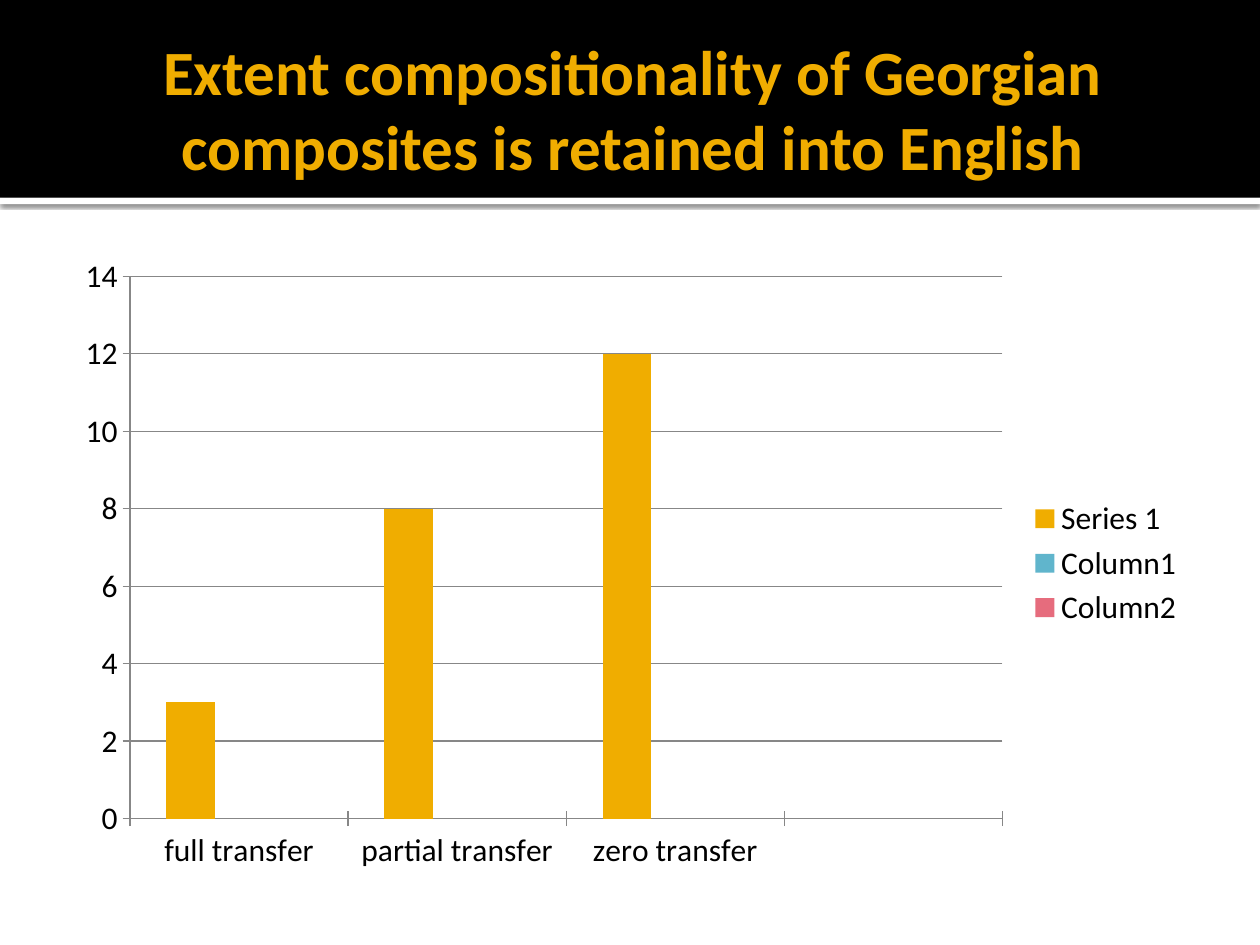
from dataclasses import dataclass
from typing import Optional

from lxml import etree
from pptx import Presentation
from pptx.chart.data import CategoryChartData
from pptx.dml.color import RGBColor
from pptx.enum import chart as charts, shapes, text
from pptx.oxml.ns import qn
from pptx.util import Inches, Pt


@dataclass(frozen=True)
class Theme:
    font: str = "Calibri"
    gold: str = "F0AD00"
    blue: str = "60B5CC"
    rose: str = "E66C7D"
    black: str = "000000"
    white: str = "FFFFFF"
    axis_grey: str = "878787"
    title_size: int = 36
    chart_size: int = 18


@dataclass(frozen=True)
class Box:
    left: float
    top: float
    width: float
    height: float

    def lengths(self) -> list:
        return [Inches(v) for v in (self.left, self.top, self.width, self.height)]


@dataclass(frozen=True)
class Band:
    box: Box
    color: str
    shadow: bool = False


@dataclass(frozen=True)
class Series:
    name: str
    values: tuple[Optional[int], ...]
    color: str


THEME = Theme()
BANDS = (
    Band(Box(0, 1.57, 10, 0.05), THEME.white, shadow=True),
    Band(Box(0, 0, 10, 1.57), THEME.black),
)
TITLE = "Extent compositionality of Georgian composites is retained into English"
TRANSFERS = ("full transfer", "partial transfer", "zero transfer", "")
NO_VALUES = (None,) * len(TRANSFERS)
SERIES = (
    Series("Series 1", (3, 8, 12, None), THEME.gold),
    Series("Column1", NO_VALUES, THEME.blue),
    Series("Column2", NO_VALUES, THEME.rose),
)


def rgb(color: str) -> RGBColor:
    return RGBColor.from_string(color)


def add_drop_shadow(shape) -> None:
    effects = shape._element.spPr.find(qn("a:effectLst"))
    shadow = etree.SubElement(effects, qn("a:outerShdw"), blurRad=str(Pt(2.5)),
                              dist=str(Pt(0.8)), dir="5400000", rotWithShape="0")
    color = etree.SubElement(shadow, qn("a:srgbClr"), val=THEME.black)
    etree.SubElement(color, qn("a:alpha"), val="60000")


def add_band(slide, band: Band) -> None:
    strip = slide.shapes.add_shape(shapes.MSO_SHAPE.RECTANGLE, *band.box.lengths())
    strip.fill.solid()
    strip.fill.fore_color.rgb = rgb(band.color)
    strip.line.fill.background()
    strip.shadow.inherit = False
    if band.shadow:
        add_drop_shadow(strip)


def add_text(slide, content: str, box: Box, *, size: int, color: str,
             bold: bool = False, align=text.PP_ALIGN.CENTER) -> None:
    frame = slide.shapes.add_textbox(*box.lengths()).text_frame
    frame.word_wrap = True
    frame.vertical_anchor = text.MSO_ANCHOR.MIDDLE
    frame.margin_left = Inches(0.1)
    frame.margin_right = frame.margin_top = frame.margin_bottom = Inches(0.05)
    paragraph = frame.paragraphs[0]
    paragraph.alignment = align
    run = paragraph.add_run()
    run.text = content
    run.font.name = THEME.font
    run.font.size = Pt(size)
    run.font.bold = bold
    run.font.color.rgb = rgb(color)


def add_column_chart(slide, box: Box, categories: tuple[str, ...],
                     series: tuple[Series, ...]) -> None:
    data = CategoryChartData()
    data.categories = categories
    for item in series:
        data.add_series(item.name, item.values)
    chart = slide.shapes.add_chart(charts.XL_CHART_TYPE.COLUMN_CLUSTERED,
                                   *box.lengths(), data).chart
    chart.has_title = False
    chart.font.name = THEME.font
    chart.font.size = Pt(THEME.chart_size)
    chart.font.color.rgb = rgb(THEME.black)

    # Legend
    chart.has_legend = True
    chart.legend.position = charts.XL_LEGEND_POSITION.RIGHT
    chart.legend.include_in_layout = False

    # Columns
    plot = chart.plots[0]
    plot.vary_by_categories = False
    plot.gap_width = 150
    for column, item in zip(plot.series, series):
        column.format.fill.solid()
        column.format.fill.fore_color.rgb = rgb(item.color)

    # Axes and gridlines
    values = chart.value_axis
    values.minimum_scale, values.maximum_scale, values.major_unit = 0, 14, 2
    values.has_major_gridlines = True
    for axis in (chart.category_axis, values):
        axis.major_tick_mark = charts.XL_TICK_MARK.CROSS
    for rule in (chart.category_axis, values, values.major_gridlines):
        rule.format.line.color.rgb = rgb(THEME.axis_grey)
        rule.format.line.width = Pt(0.75)


def main() -> None:
    deck = Presentation()
    deck.slide_width, deck.slide_height = Inches(10), Inches(7.5)
    slide = deck.slides.add_slide(deck.slide_layouts[6])
    slide.background.fill.solid()
    slide.background.fill.fore_color.rgb = rgb(THEME.white)

    # Header
    for band in BANDS:
        add_band(slide, band)
    add_text(slide, TITLE, Box(0.5, 0.17, 9, 1.37), size=THEME.title_size,
             color=THEME.gold, bold=True)

    # Transfer counts
    add_column_chart(slide, Box(0.5, 1.94, 9, 5.06), TRANSFERS, SERIES)
    deck.save("out.pptx")


if __name__ == "__main__":
    main()
